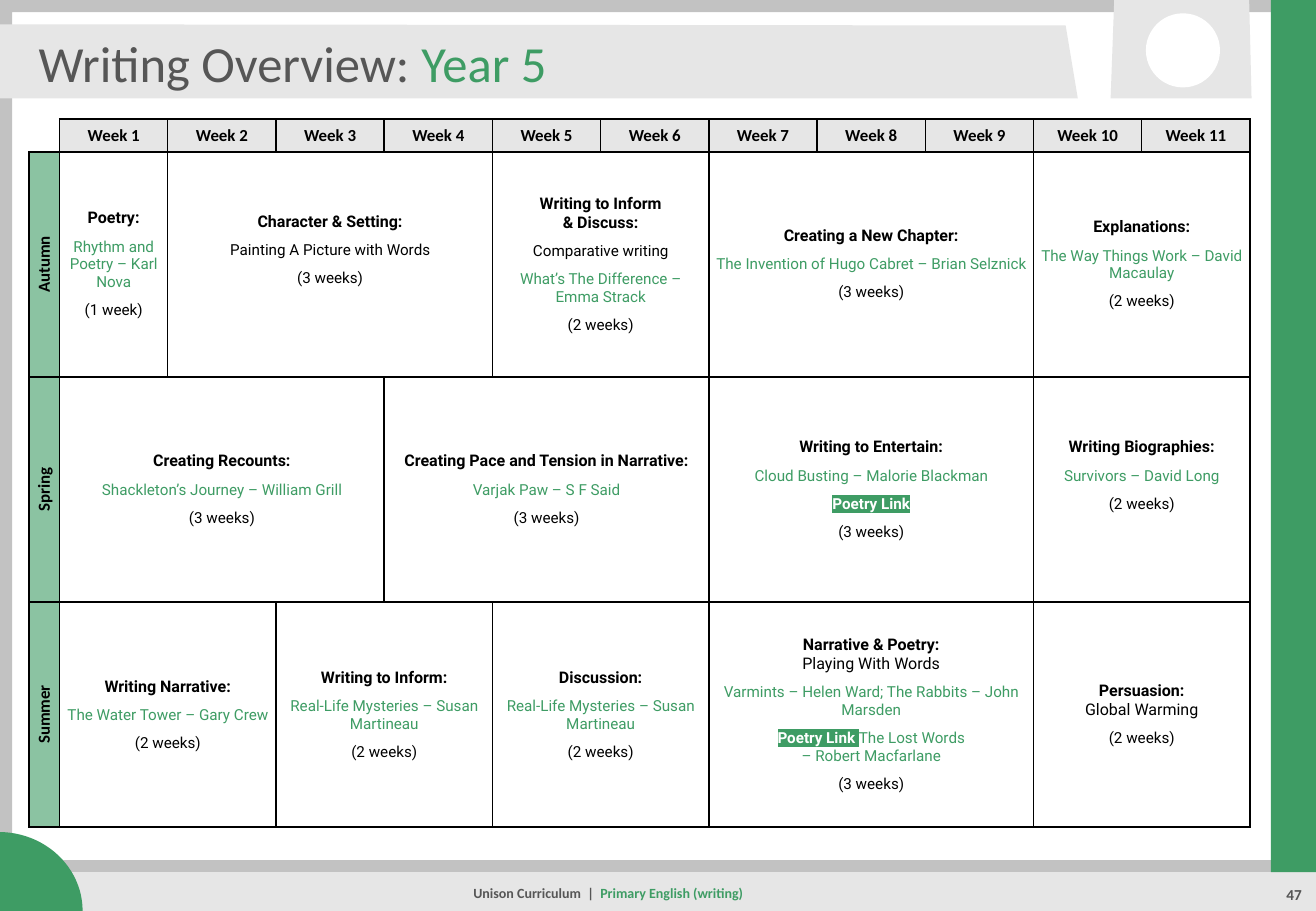
import copy

import pptx
import pptx.dml.color
import pptx.enum.shapes
import pptx.enum.text
import pptx.oxml.ns
import pptx.util
from lxml import etree
from pptx.util import Inches

GREEN, BLACK, WHITE = "3E9C64", "000000", "FFFFFF"
DARK, MID, PALE = "565656", "C2C2C2", "E6E6E6"
SLIDE_W, SLIDE_H = 10.83, 7.5
WEEKS = 11
SHAPE = pptx.enum.shapes.MSO_SHAPE
CENTER = pptx.enum.text.PP_ALIGN.CENTER
MIDDLE = pptx.enum.text.MSO_ANCHOR.MIDDLE

# style: font, size, bold, colour, highlight
STYLES = {
    "title": ("Calibri", 30, False, DARK, None),
    "year": ("Calibri", 30, False, GREEN, None),
    "footer": ("Calibri", 8.3, True, DARK, None),
    "subject": ("Calibri", 8.3, True, GREEN, None),
    "page": ("Calibri", 9, True, DARK, None),
    "label": ("Calibri", 10, True, BLACK, None),
    "heading": ("Roboto", 9.5, True, BLACK, None),
    "subheading": ("Roboto", 9.5, False, BLACK, None),
    "plain": ("Roboto", 9, False, BLACK, None),
    "book": ("Roboto", 9, False, GREEN, None),
    "link": ("Roboto", 9, True, WHITE, GREEN),
}


def unit(weeks, heading, *details, lift=0):
    """A teaching unit; lift is the bottom margin that raises its text."""
    first = heading if isinstance(heading, list) else [(heading, "heading")]
    length = f"({weeks} week{'s' if weeks > 1 else ''})"
    return weeks, [first, *details, [(length, "plain")]], lift


def book(text):
    return [(text, "book")]


TERMS = {
    "Autumn": [
        unit(1, "Poetry:", book("Rhythm and Poetry – Karl Nova")),
        unit(3, "Character & Setting:", [("Painting A Picture with Words", "plain")], lift=0.23),
        unit(2, "Writing to Inform\n& Discuss:", [("Comparative writing", "plain")],
             book("What’s The Difference – Emma Strack")),
        unit(3, "Creating a New Chapter:", book("The Invention of Hugo Cabret – Brian Selznick")),
        unit(2, "Explanations:", book("The Way Things Work – David Macaulay")),
    ],
    "Spring": [
        unit(3, "Creating Recounts:", book("Shackleton’s Journey – William Grill")),
        unit(3, "Creating Pace and Tension in Narrative:", book("Varjak Paw – S F Said")),
        unit(3, "Writing to Entertain:", book("Cloud Busting – Malorie Blackman"),
             [("Poetry Link", "link")]),
        unit(2, "Writing Biographies:", book("Survivors – David Long"), lift=0.23),
    ],
    "Summer": [
        unit(2, "Writing Narrative:", book("The Water Tower – Gary Crew")),
        unit(2, "Writing to Inform:", book("Real-Life Mysteries – Susan Martineau")),
        unit(2, "Discussion:", book("Real-Life Mysteries – Susan Martineau")),
        unit(3, [("Narrative & Poetry:\n", "heading"), ("Playing With Words", "subheading")],
             book("Varmints – Helen Ward; The Rabbits – John Marsden"),
             [("Poetry Link ", "link"), ("The Lost Words\n– Robert Macfarlane", "book")]),
        unit(2, [("Persuasion:\n", "heading"), ("Global Warming", "subheading")]),
    ],
}


def rgb(hex_colour):
    return pptx.dml.color.RGBColor.from_string(hex_colour)


def sub(parent, tag, **attrs):
    return etree.SubElement(parent, pptx.oxml.ns.qn(tag), attrs)


def add_run(p, text, style):
    name, size, bold, colour, highlight = STYLES[style]
    r = p.add_run()
    r.text = text
    r.font.size = pptx.util.Pt(size)
    r.font.bold = bold
    r.font.color.rgb = rgb(colour)
    if highlight:
        sub(sub(r.font._element, "a:highlight"), "a:srgbClr", val=highlight)
    r.font.name = name
    return r


def write(p, runs):
    """Add styled runs, turning each newline into a line break."""
    for text, style in runs:
        for i, line in enumerate(text.split("\n")):
            if i:
                p.add_line_break()
                p._p[-1].insert(0, copy.deepcopy(r._r.rPr))
            if line:
                r = add_run(p, line, style)


def add_text(s, box, runs, align=None, anchor=MIDDLE, spacing=None):
    tf = s.shapes.add_textbox(*map(Inches, box)).text_frame
    tf.word_wrap = True
    tf.vertical_anchor = anchor
    p = tf.paragraphs[0]
    p.alignment = align
    p.line_spacing = spacing
    write(p, runs)


def paint(sp, colour):
    sp.shadow.inherit = False
    sp.fill.solid()
    sp.fill.fore_color.rgb = rgb(colour)
    sp.line.fill.background()
    return sp


def add_block(s, kind, box, colour):
    return paint(s.shapes.add_shape(kind, *map(Inches, box)), colour)


def add_outline(s, points, colour):
    start, *rest = [(Inches(x), Inches(y)) for x, y in points]
    builder = s.shapes.build_freeform(*start)
    builder.add_line_segments(rest)
    paint(builder.convert_to_shape(), colour)


def add_frame(s):
    frame = add_block(s, SHAPE.FRAME, (0, 0, SLIDE_W, SLIDE_H), MID)
    frame.adjustments[0] = 0.1 / SLIDE_H
    add_block(s, SHAPE.RECTANGLE, (0.32, 7.18, SLIDE_W - 0.32, SLIDE_H - 7.18), PALE)
    rule = s.shapes.add_connector(pptx.enum.shapes.MSO_CONNECTOR.STRAIGHT, Inches(0.05),
                                  Inches(7.13), Inches(SLIDE_W), Inches(7.13))
    rule.line.color.rgb = rgb(MID)
    rule.line.width = pptx.util.Pt(7)
    sub(rule._element.spPr, "a:effectLst")
    add_block(s, SHAPE.ARC, (-0.7, 6.85, 1.38, 1.3), GREEN)


def add_footer(s):
    add_text(s, (2.05, 7.21, 5.91, 0.3),
             [("Unison Curriculum  |  ", "footer"), ("Primary English (writing)", "subject")],
             CENTER, spacing=0.9)


def add_header(s):
    add_outline(s, [(9.14, 0.81), (10.3, 0.81), (10.28, -0.01), (9.17, -0.01)], PALE)
    add_block(s, SHAPE.OVAL, (9.43, 0.11, 0.61, 0.61), WHITE)
    add_outline(s, [(0, 0.2), (0, 0.81), (8.87, 0.81), (8.77, 0.21)], PALE)
    add_text(s, (0.22, 0.26, 8.42, 0.5), [("Writing Overview: ", "title"), ("Year 5", "year")])


def add_side_bar(s):
    add_block(s, SHAPE.RECTANGLE, (10.46, 0, SLIDE_W - 10.46, 7.18), GREEN)
    add_text(s, (10.33, 7.21, 0.64, 0.28), [("47", "page")], CENTER,
             pptx.enum.text.MSO_ANCHOR.TOP, 1.2)


def set_borders(cell, sides):
    for side in sides:
        ln = sub(cell._tc.get_or_add_tcPr(), f"a:ln{side}", w="12700")
        sub(sub(ln, "a:solidFill"), "a:srgbClr", val=BLACK)


def fill_cell(cell, paragraphs, colour=None, gap=0, margins=(0.06, 0), lift=0):
    side, edge = map(Inches, margins)
    cell.margin_left = cell.margin_right = side
    cell.margin_top = edge
    cell.margin_bottom = edge + Inches(lift)
    cell.vertical_anchor = MIDDLE
    if colour:
        cell.fill.solid()
        cell.fill.fore_color.rgb = rgb(colour)
    tf = cell.text_frame
    for i, runs in enumerate(paragraphs):
        p = tf.add_paragraph() if i else tf.paragraphs[0]
        p.alignment = CENTER
        p.space_after = pptx.util.Pt(gap)
        write(p, runs)


def add_overview(s, box, label_w=0.25, header_h=0.27):
    left, top, width, height = box
    table = s.shapes.add_table(len(TERMS) + 1, WEEKS + 1, *map(Inches, box)).table
    table.first_row = table.horz_banding = False
    for i, column in enumerate(table.columns):
        column.width = Inches((width - label_w) / WEEKS if i else label_w)
    for i, row in enumerate(table.rows):
        row.height = Inches((height - header_h) / len(TERMS) if i else header_h)
    corner = table.cell(0, 0)
    for cell in table.iter_cells():
        set_borders(cell, "RB" if cell._tc is corner._tc else "LRTB")
        cell.fill.background()
    fill_cell(corner, [])
    sub(corner.text_frame.paragraphs[0]._p, "a:endParaRPr", sz="1000")
    for week in range(1, WEEKS + 1):
        fill_cell(table.cell(0, week), [[(f"Week {week}", "label")]], PALE, gap=2)
    for row, (term, units) in enumerate(TERMS.items(), 1):
        label = table.cell(row, 0)
        fill_cell(label, [[(term, "label")]], GREEN, margins=(0.04, 0.04))
        tcPr = label._tc.tcPr
        tcPr.set("vert", "vert270")
        sub(tcPr.find(pptx.oxml.ns.qn("a:solidFill"))[0], "a:alpha", val="60000")
        week = 1
        for weeks, paragraphs, lift in units:
            cell = table.cell(row, week)
            if weeks > 1:
                cell.merge(table.cell(row, week + weeks - 1))
            fill_cell(cell, paragraphs, gap=6, lift=lift)
            week += weeks


def main():
    prs = pptx.Presentation()
    prs.slide_width, prs.slide_height = Inches(SLIDE_W), Inches(SLIDE_H)
    s = prs.slides.add_slide(prs.slide_layouts[6])
    add_frame(s)
    add_footer(s)
    add_header(s)
    add_side_bar(s)
    add_overview(s, (0.24, 0.98, 10.05, 5.83))
    prs.save("out.pptx")


if __name__ == "__main__":
    main()
